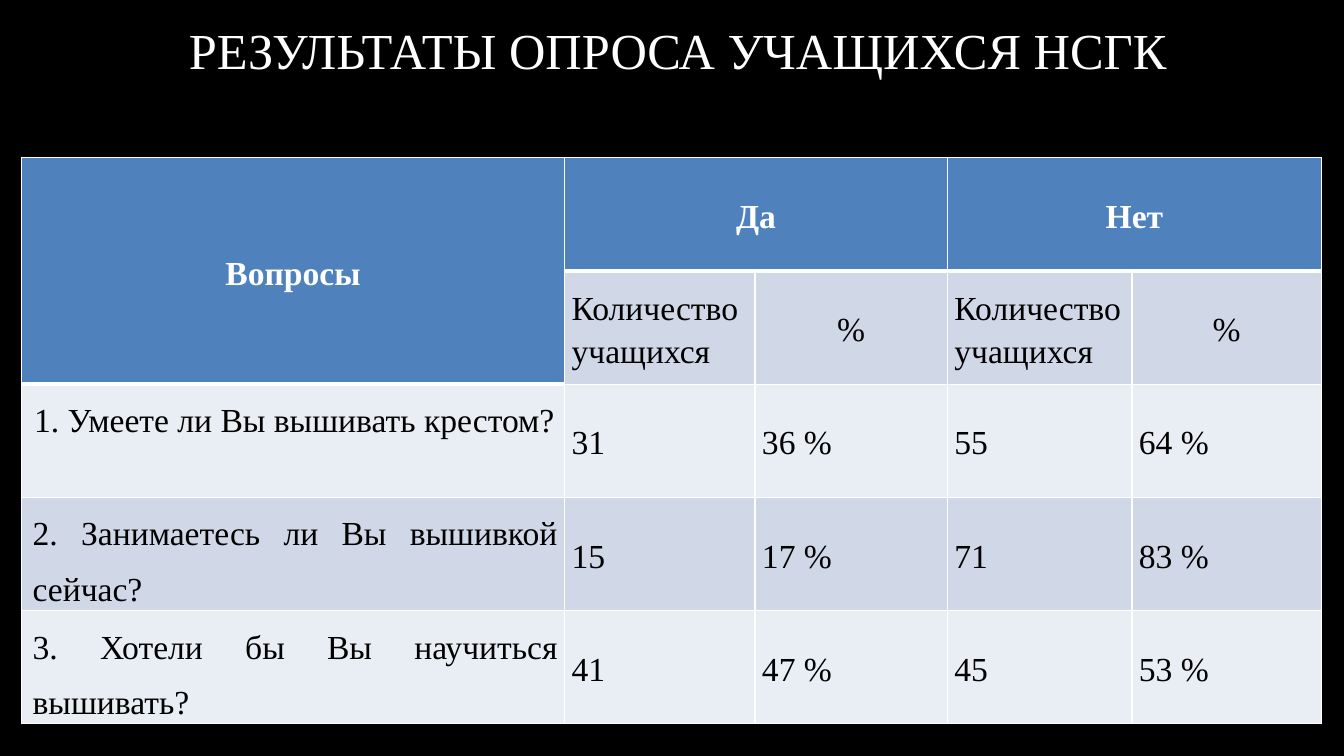
import pptx
import pptx.dml.color
import pptx.enum.text
import pptx.oxml.ns
import pptx.util
import lxml.etree

# Content
TITLE = "РЕЗУЛЬТАТЫ ОПРОСА УЧАЩИХСЯ НСГК"
SURVEY = [
    ["Вопросы", "Да", "", "Нет", ""],
    ["", "Количество учащихся", "%", "Количество\nучащихся", "%"],
    ["1. Умеете ли Вы вышивать крестом?", "31", "36 %", "55", "64 %"],
    ["2. Занимаетесь ли Вы вышивкой сейчас?", "15", "17 %", "71", "83 %"],
    ["3. Хотели бы Вы научиться вышивать?", "41", "47 %", "45", "53 %"],
]
MERGES = [((0, 0), (1, 0)), ((0, 1), (0, 2)), ((0, 3), (0, 4))]
COLUMN_WIDTHS = [388, 136, 137.5, 131.8, 135.4]
ROW_HEIGHT = 80.9
FONT = "Times New Roman"
WHITE, BLACK, BLUE = "FFFFFF", "000000", "4F81BD"
BANDS = ["E9EDF4", "D0D8E8"]

Pt = pptx.util.Pt
Align = pptx.enum.text.PP_ALIGN
Anchor = pptx.enum.text.MSO_ANCHOR


def rgb(hex_string):
    return pptx.dml.color.RGBColor.from_string(hex_string)


def style_font(paragraph, size, color, bold=False):
    for run in paragraph.runs:
        run.font.name = FONT
        run.font.size = Pt(size)
        run.font.bold = bold
        run.font.color.rgb = rgb(color)


def is_header(row, column):
    return row == 0 or (row == 1 and column == 0)


def add_borders(cell, widths):
    qn = pptx.oxml.ns.qn
    properties = cell._tc.get_or_add_tcPr()
    for side, width in widths.items():
        line = lxml.etree.SubElement(properties, qn("a:ln" + side), w=str(Pt(width)))
        fill = lxml.etree.SubElement(line, qn("a:solidFill"))
        lxml.etree.SubElement(fill, qn("a:srgbClr"), val=WHITE)


def format_cell(cell, row, column):
    header = is_header(row, column)
    question = row > 1 and column == 0
    answer = row > 1 and column > 0

    # Borders and fill, with a thick rule under the headers
    below_header = row > 0 and is_header(row - 1, column) and not header
    above_body = header and not (row == 0 and column == 0)
    add_borders(cell, {"L": 1, "R": 1, "T": 3 if below_header else 1,
                       "B": 3 if above_body or cell.is_merge_origin else 1})
    cell.fill.solid()
    cell.fill.fore_color.rgb = rgb(BLUE if header else BANDS[row % 2])

    # Text
    cell.margin_left = cell.margin_right = Pt(5)
    cell.margin_top = cell.margin_bottom = Pt(0)
    cell.vertical_anchor = Anchor.TOP if question else Anchor.MIDDLE
    if cell.is_spanned:
        return
    cell.text_frame.text = SURVEY[row][column]
    for paragraph in cell.text_frame.paragraphs:
        if answer:
            paragraph.alignment = Align.LEFT
        elif header or paragraph.text == "%":
            paragraph.alignment = Align.CENTER
        else:
            paragraph.alignment = Align.JUSTIFY
        paragraph.line_spacing = 1.5 if question else 1.15
        if header or answer:
            paragraph.space_after = Pt(10)
        if question:
            indents = paragraph._p.get_or_add_pPr()
            indents.set("marL", str(Pt(3)))
            indents.set("indent", str(Pt(1 if row == 2 else 0)))
        style_font(paragraph, 24, WHITE if header else BLACK, header)


# Slide
deck = pptx.Presentation()
deck.slide_width, deck.slide_height = Pt(960), Pt(540)
slide = deck.slides.add_slide(deck.slide_layouts[5])
slide.background.fill.solid()
slide.background.fill.fore_color.rgb = rgb(BLACK)

# Title
title = slide.shapes.title
title.left, title.top, title.width, title.height = Pt(27), Pt(0), Pt(914.4), Pt(75.6)
title.text_frame.text = TITLE
title.text_frame.vertical_anchor = Anchor.MIDDLE
heading = title.text_frame.paragraphs[0]
heading.alignment = Align.CENTER
heading.line_spacing = 0.9
style_font(heading, 36, WHITE)

# Survey table
survey = slide.shapes.add_table(
    len(SURVEY), len(COLUMN_WIDTHS), Pt(15.3), Pt(112.7),
    Pt(sum(COLUMN_WIDTHS)), Pt(ROW_HEIGHT * len(SURVEY))).table
for column, width in zip(survey.columns, COLUMN_WIDTHS):
    column.width = Pt(width)
for row in survey.rows:
    row.height = Pt(ROW_HEIGHT)
for first, last in MERGES:
    survey.cell(*first).merge(survey.cell(*last))
for r in range(len(SURVEY)):
    for c in range(len(COLUMN_WIDTHS)):
        format_cell(survey.cell(r, c), r, c)

deck.save("out.pptx")
